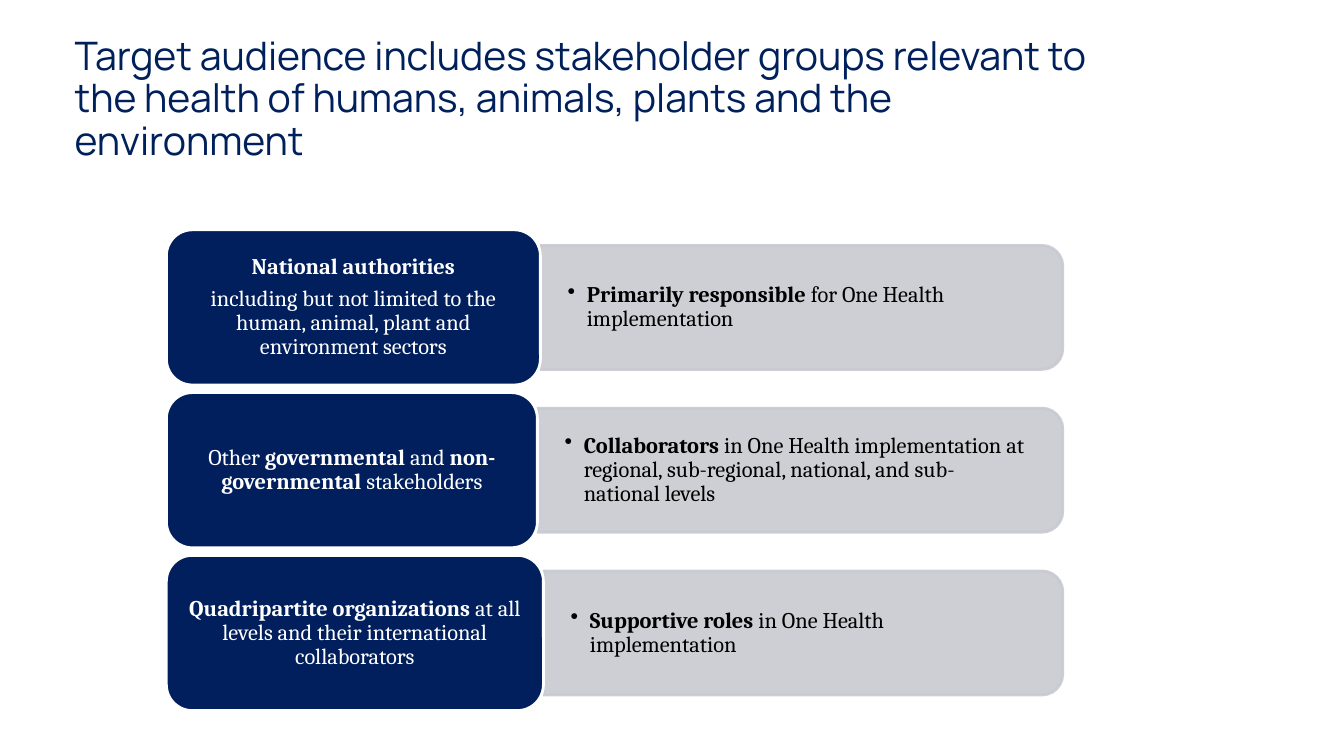
from pptx import Presentation
from pptx.dml.color import RGBColor as RGB
from pptx.enum.shapes import MSO_SHAPE as SHAPE
from pptx.enum.text import MSO_ANCHOR as ANCHOR, PP_ALIGN as ALIGN
from pptx.oxml import parse_xml
from pptx.oxml.ns import nsdecls
from pptx.util import Inches, Pt

COLORS = {"title": "00205C", "navy": "001F5C", "grey": "C9CAD1", "white": "FFFFFF", "black": "000000"}


def write(tf, paragraphs, font="Cambria", size=16, color="black", align=ALIGN.LEFT,
          bullet=False, inset=(0.1, 0.05), anchor=ANCHOR.MIDDLE):
    tf.word_wrap = True
    tf.vertical_anchor = anchor
    tf.margin_left = tf.margin_right = Inches(inset[0])
    tf.margin_top = tf.margin_bottom = Inches(inset[1])
    for i, runs in enumerate(paragraphs):
        p = tf.add_paragraph() if i else tf.paragraphs[0]
        p.alignment = align
        p.line_spacing = 0.9
        p.space_before = Pt(5.6 if i else 0)
        if bullet:
            pPr = p._p.get_or_add_pPr()
            pPr.set("marL", str(Inches(0.19)))
            pPr.set("indent", str(-Inches(0.19)))
            pPr.append(parse_xml(f'<a:buChar {nsdecls("a")} char="•"/>'))
        for text, bold in runs:
            r = p.add_run()
            r.text = text
            r.font.name = font
            r.font.size = Pt(size)
            r.font.bold = bold
            r.font.color.rgb = RGB.from_string(COLORS[color])


def add_box(kind, left, top, width, height, fill, line, alpha=None):
    sp = s.shapes.add_shape(kind, Inches(left), Inches(top), Inches(width), Inches(height))
    sp.shadow.inherit = False
    sp.adjustments[0] = 0.167
    sp.fill.solid()
    sp.fill.fore_color.rgb = RGB.from_string(COLORS[fill])
    sp.line.color.rgb = RGB.from_string(COLORS[line])
    sp.line.width = Pt(2)
    if alpha:
        for clr in sp._element.spPr.iter("{*}srgbClr"):
            clr.append(parse_xml(f'<a:alpha {nsdecls("a")} val="{alpha * 1000}"/>'))
    return sp


prs = Presentation()
prs.slide_width, prs.slide_height = Inches(13.33), Inches(7.5)
s = prs.slides.add_slide(prs.slide_layouts[5])

title = s.shapes.title
title.left, title.top, title.width, title.height = (Inches(v) for v in (0.64, 0.31, 10.27, 1.37))
write(title.text_frame, [[("Target audience includes stakeholder groups relevant to the health of humans, "
                           "animals, plants and the environment", False)]],
      font="Manrope", size=28, color="title")

LEFT, RIGHT, TOP, PITCH = 1.65, 10.54, 2.28, 1.615
GROUP_H, ROLE_H, TEXT_H = 1.54, 1.23, 1.11
rows = [
    (3.71,
     [[("National authorities", True)],
      [("including but not limited to the human, animal, plant and environment sectors", False)]],
     [("Primarily responsible", True), (" for One Health implementation", False)]),
    (3.68,
     [[("Other ", False), ("governmental", True), (" and ", False),
       ("non-governmental ", True), ("stakeholders", False)]],
     [("Collaborators", True),
      (" in One Health implementation at regional, sub-regional, national, and sub-national levels", False)]),
    (3.74,
     [[("Quadripartite organizations ", True),
       ("at all levels and their international collaborators", False)]],
     [("Supportive roles ", True), ("in One Health implementation", False)]),
]

for i, (group_w, group, role) in enumerate(rows):
    top = TOP + i * PITCH
    middle = top + GROUP_H / 2
    split = LEFT + group_w
    role_w = RIGHT - split

    sp = add_box(SHAPE.ROUND_2_SAME_RECTANGLE, (split + RIGHT - ROLE_H) / 2, middle - role_w / 2,
                 ROLE_H, role_w, "grey", "grey", alpha=90)
    sp.rotation = 90

    tb = s.shapes.add_textbox(Inches(split), Inches(middle - TEXT_H / 2),
                              Inches(role_w - 0.06), Inches(TEXT_H))
    write(tb.text_frame, [role], bullet=True, inset=(0.27, 0.14))

    sp = add_box(SHAPE.ROUNDED_RECTANGLE, LEFT, top, group_w, GROUP_H, "navy", "white")
    write(sp.text_frame, group, color="white", align=ALIGN.CENTER, inset=(0.07, 0.1))

prs.save("out.pptx")
